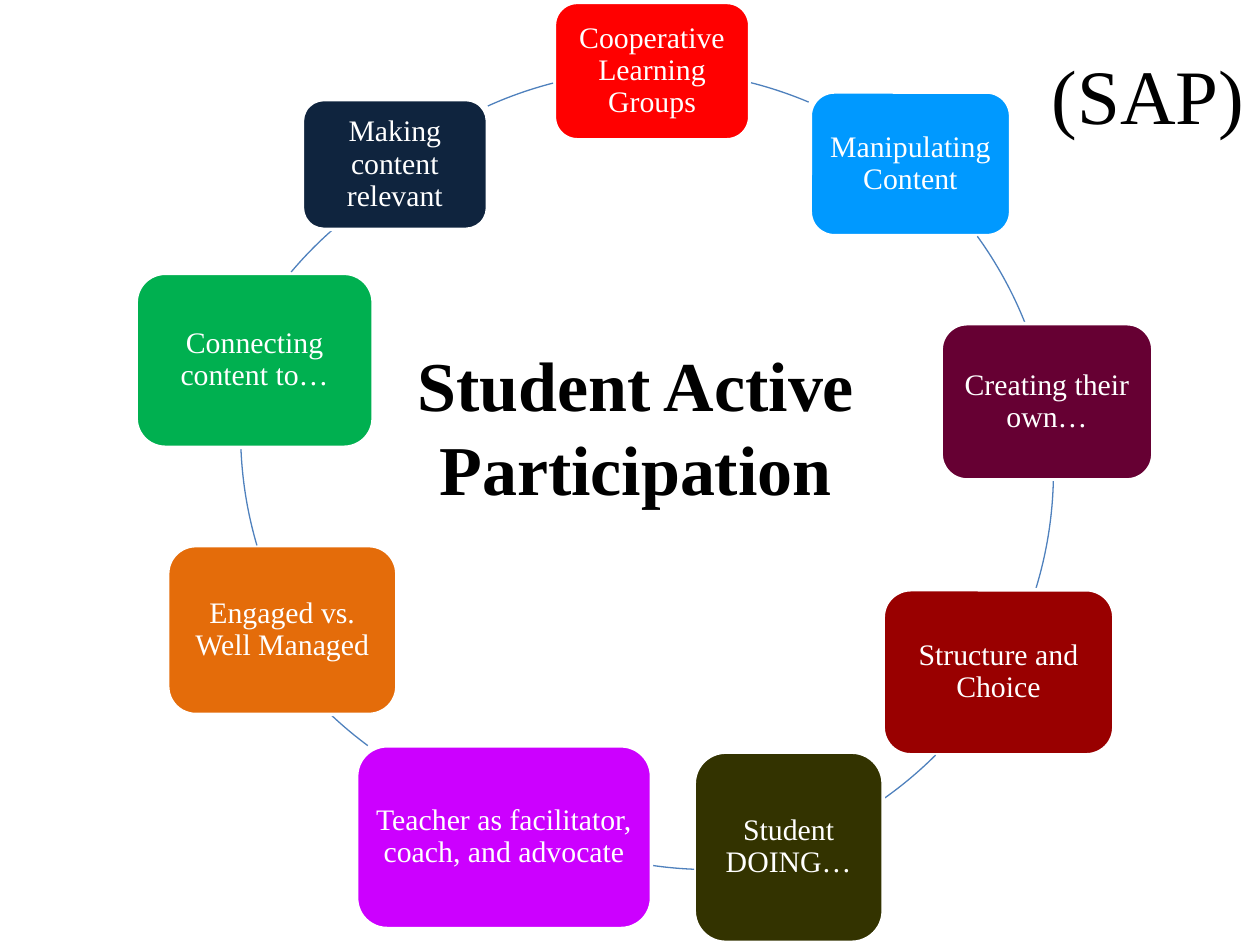
from pptx import Presentation
from pptx import util as u
from pptx.dml.color import RGBColor
from pptx.enum import shapes, text

WHITE = RGBColor(0xFF, 0xFF, 0xFF)
BLACK = RGBColor(0x00, 0x00, 0x00)
RING_BLUE = RGBColor(0x4F, 0x81, 0xBD)
RED = RGBColor(0xFF, 0x00, 0x00)
SKY = RGBColor(0x00, 0x99, 0xFF)
PLUM = RGBColor(0x66, 0x00, 0x33)
MAROON = RGBColor(0x99, 0x00, 0x00)
OLIVE = RGBColor(0x33, 0x33, 0x00)
VIOLET = RGBColor(0xCC, 0x00, 0xFF)
ORANGE = RGBColor(0xE4, 0x6C, 0x0A)
GREEN = RGBColor(0x00, 0xB0, 0x50)
NAVY = RGBColor(0x0F, 0x24, 0x3E)

RING_SIZE = 458
RING = (144, 40.3)

STRATEGIES = [
    ("Cooperative Learning Groups", RED, (316.8, 1.4, 111.6, 78.5)),
    ("Manipulating Content", SKY, (463, 52.6, 114.5, 82.1)),
    ("Creating their own…", PLUM, (537.8, 185, 121, 89.3)),
    ("Structure and Choice", MAROON, (504.7, 337, 131.8, 94.3)),
    ("Student DOING…", OLIVE, (396.7, 429.8, 108, 108.7)),
    ("Teacher as facilitator, coach, and advocate", VIOLET, (203.8, 426.2, 168.5, 104.4)),
    ("Engaged vs. Well Managed", ORANGE, (95.8, 311.8, 131, 96.5)),
    ("Connecting content to…", GREEN, (77.8, 156.2, 135.4, 99.4)),
    ("Making content relevant", NAVY, (172.8, 56.9, 105.8, 74.2)),
]

LINKS = [
    (RING, 284.2, 292.9),
    (RING, 324.1, 338.2),
    (RING, 1.4, 17),
    (RING, 45.1, 54.6),
    ((176.4, 38.9), 92.2, 98.1),
    ((117.4, 13), 126.5, 133.2),
    ((137.5, 18), 163.6, 177.8),
    ((112.3, 74.2), 220.2, 228.7),
    (RING, 245.7, 255.6),
]


class CycleSlide:
    font = "Times New Roman"

    def __init__(self, slide):
        self.slide = slide

    def set_words(self, shape, words, size, color, align, bold=False):
        frame = shape.text_frame
        frame.word_wrap = True
        frame.text = words
        paragraph = frame.paragraphs[0]
        paragraph.alignment = align
        for run in paragraph.runs:
            run.font.name = self.font
            run.font.size = u.Pt(size)
            run.font.bold = bold
            run.font.color.rgb = color
        return frame

    def shape(self, kind, box, line_color, line_width):
        shape = self.slide.shapes.add_shape(kind, *map(u.Pt, box))
        shape.shadow.inherit = False
        shape.line.color.rgb = line_color
        shape.line.width = u.Pt(line_width)
        return shape

    def strategy(self, words, color, box):
        card = self.shape(shapes.MSO_SHAPE.ROUNDED_RECTANGLE, box, WHITE, 2)
        card.fill.solid()
        card.fill.fore_color.rgb = color
        frame = self.set_words(card, words, 17, WHITE, text.PP_ALIGN.CENTER)
        frame.vertical_anchor = text.MSO_ANCHOR.MIDDLE
        frame.margin_left = frame.margin_right = u.Pt(5)
        frame.margin_top = frame.margin_bottom = u.Pt(5)
        frame.paragraphs[0].line_spacing = 0.9

    def link(self, corner, start, end):
        box = (*corner, RING_SIZE, RING_SIZE)
        arc = self.shape(shapes.MSO_SHAPE.ARC, box, RING_BLUE, 0.75)
        arc.fill.background()
        arc.adjustments[0] = start * 0.6
        arc.adjustments[1] = end * 0.6

    def label(self, words, box, size, align, anchor, bold=False):
        label = self.slide.shapes.add_textbox(*map(u.Pt, box))
        frame = self.set_words(label, words, size, BLACK, align, bold)
        frame.vertical_anchor = anchor


def main():
    deck = Presentation()
    deck.slide_width, deck.slide_height = u.Pt(720), u.Pt(540)
    cycle = CycleSlide(deck.slides.add_slide(deck.slide_layouts[6]))
    for strategy, link in zip(STRATEGIES, LINKS):
        cycle.strategy(*strategy)
        cycle.link(*link)
    cycle.label("Student Active Participation", (210.2, 198, 306, 90), 40,
                text.PP_ALIGN.CENTER, text.MSO_ANCHOR.MIDDLE, bold=True)
    cycle.label("(SAP)", (594, 23.8, 126, 60.5), 44,
                text.PP_ALIGN.LEFT, text.MSO_ANCHOR.TOP)
    deck.save("out.pptx")


if __name__ == "__main__":
    main()
